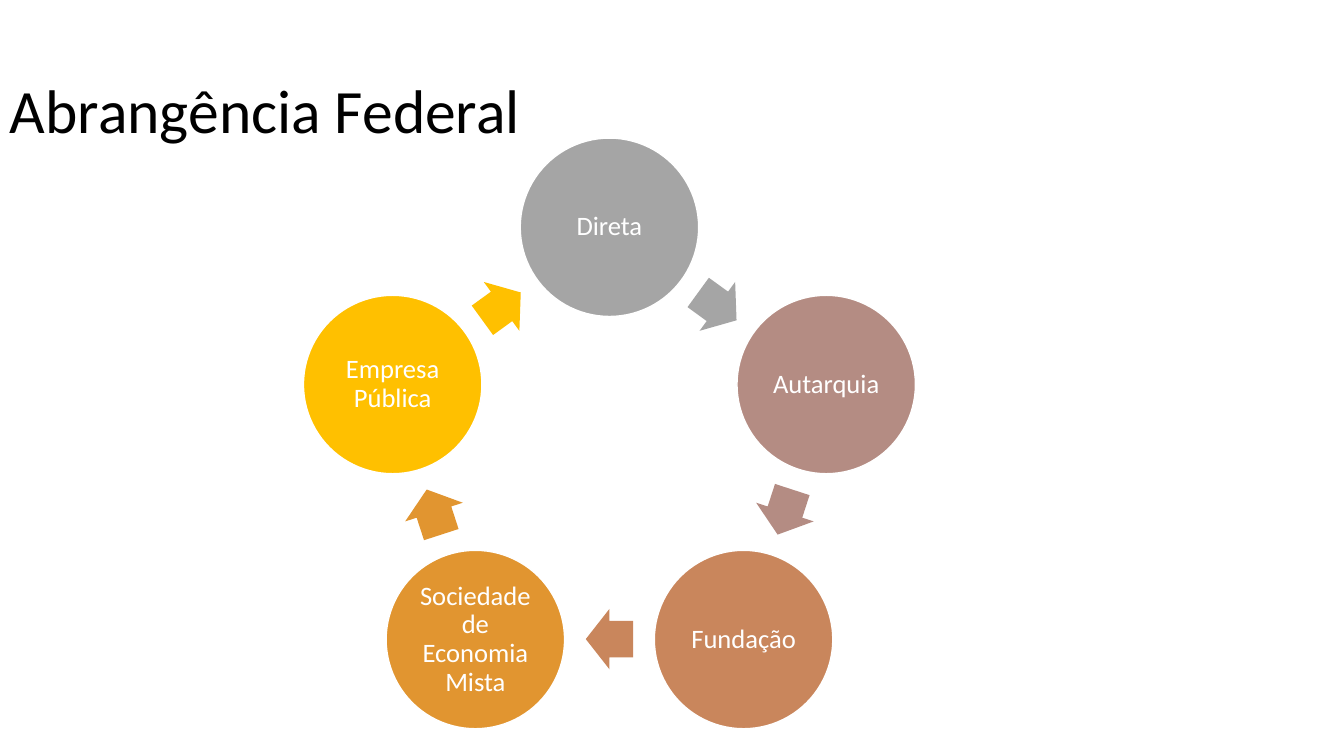
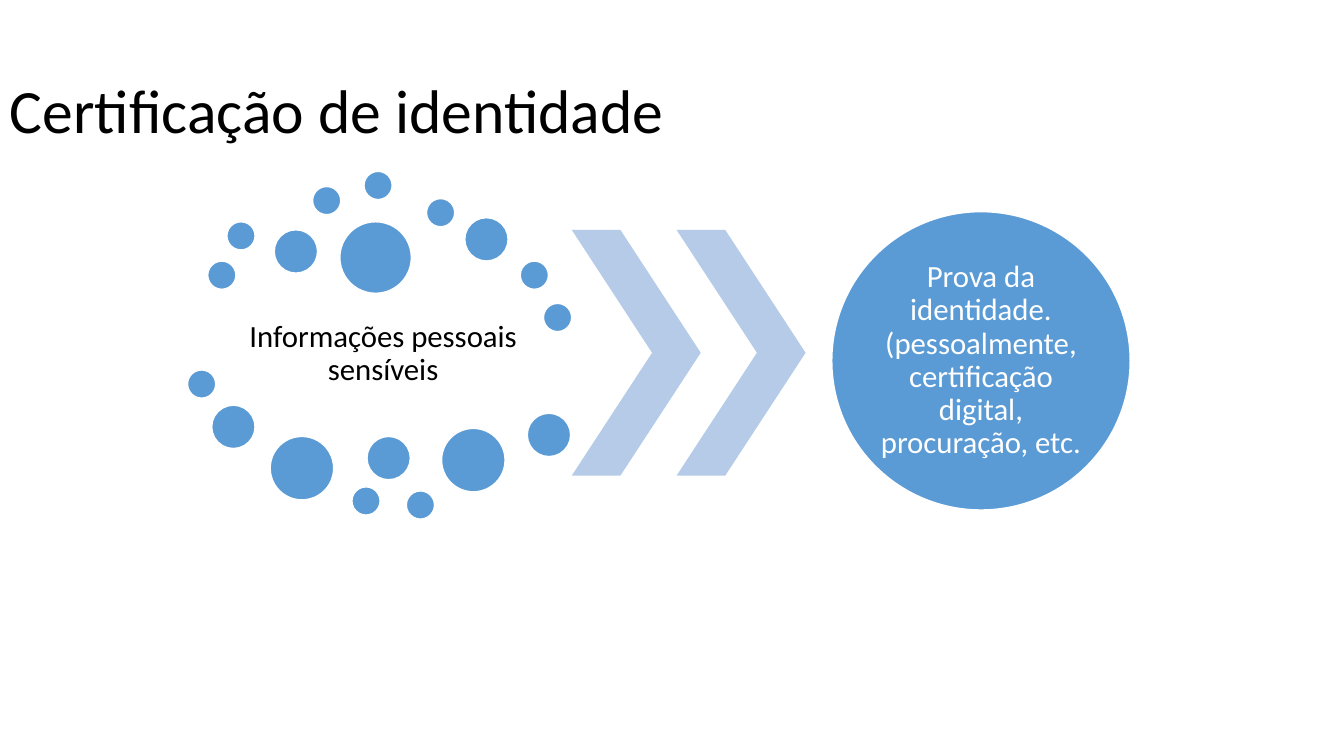
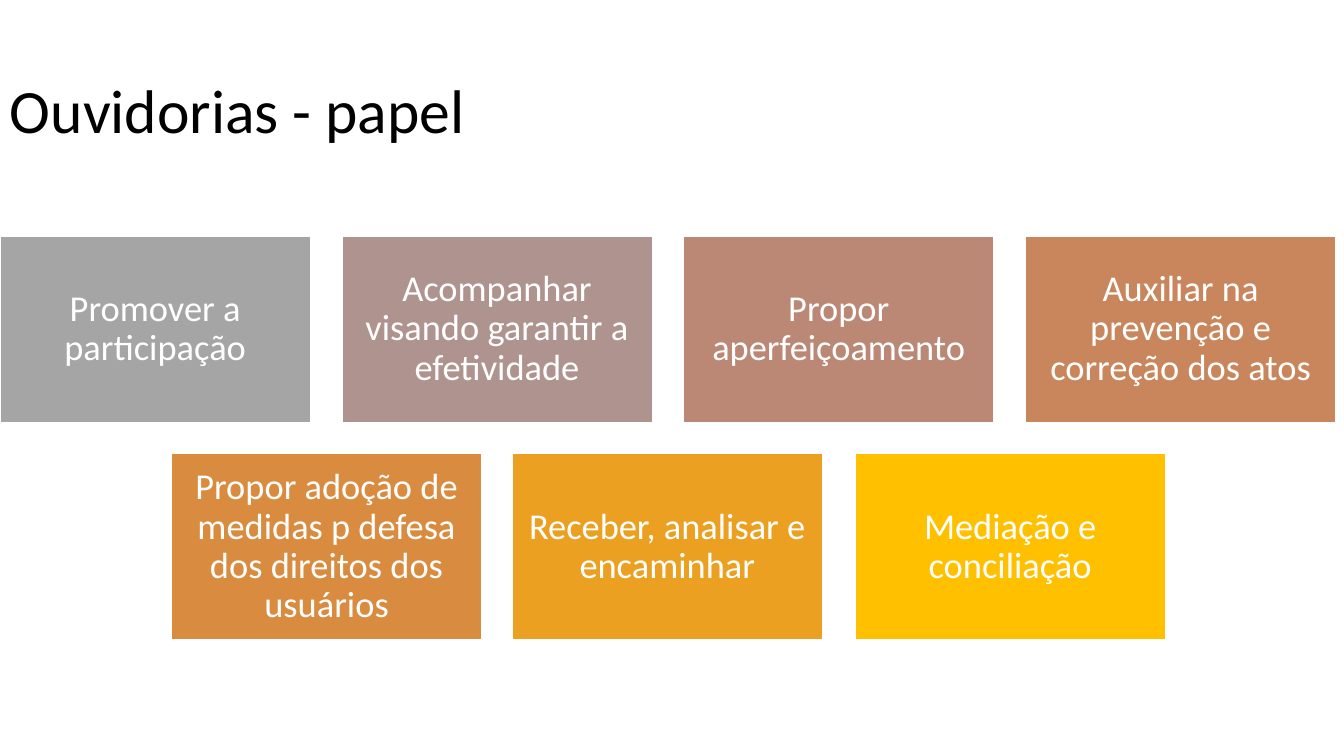
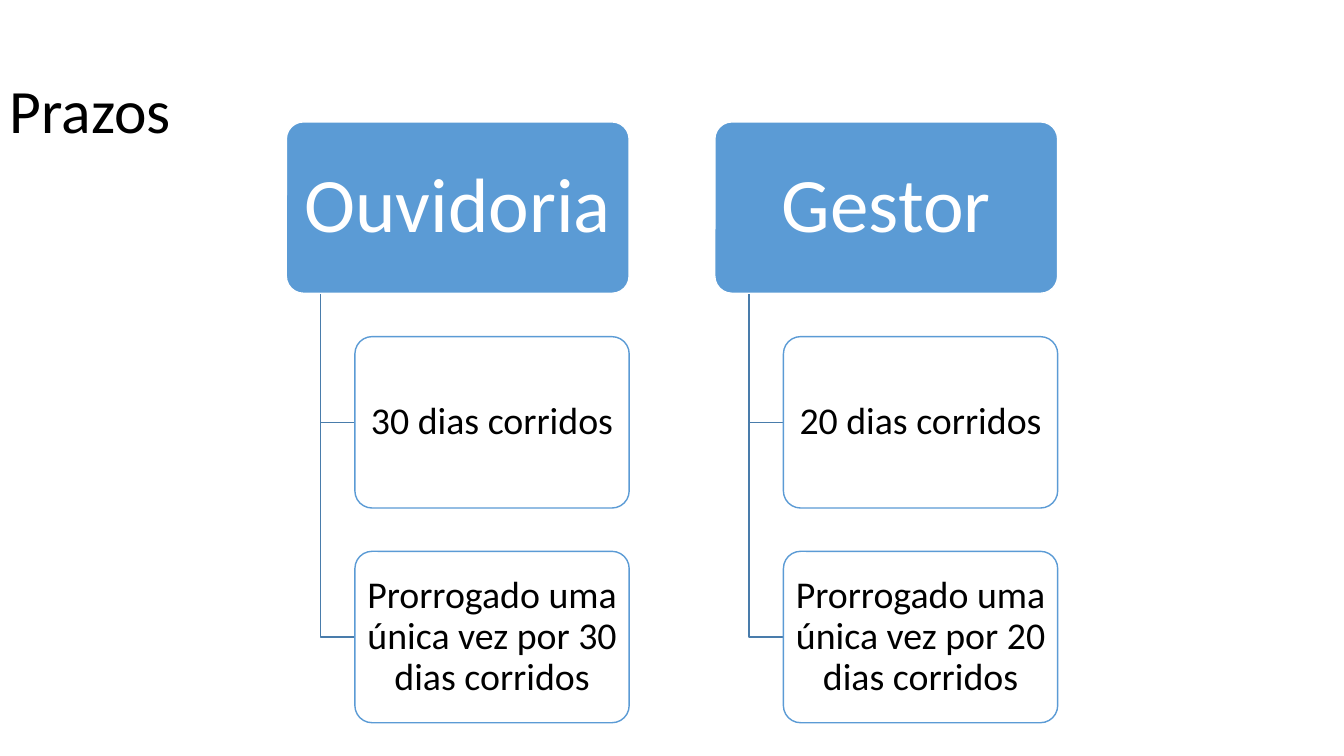
from math import cos, radians, sin

from lxml.etree import SubElement
from pptx import Presentation
from pptx.dml.color import RGBColor
from pptx.enum.shapes import MSO_SHAPE
from pptx.enum.text import MSO_ANCHOR, PP_ALIGN
from pptx.oxml.ns import qn
from pptx.util import Pt

SCALE = 9144
FONT = "Calibri"
COLORS = {
    "black": "000000",
    "white": "FFFFFF",
    "blue": "5B9BD5",
    "pale": "B5CBE7",
    "wire": "497CAB",
    "gray": "A5A5A5",
    "mauve": "B48C83",
    "dusk": "AF938F",
    "rose": "BB8876",
    "clay": "C9865C",
    "rust": "D98C3F",
    "amber": "E19530",
    "honey": "EBA021",
    "gold": "FFC000",
}


def px(value):
    return round(value) * SCALE


def color(name):
    return RGBColor.from_string(COLORS[name])


class Deck:
    def __init__(self, width, height):
        self.prs = Presentation()
        self.prs.slide_width = px(width)
        self.prs.slide_height = px(height)

    def page(self, title):
        self.slide = self.prs.slides.add_slide(self.prs.slide_layouts[6])
        box = self.slide.shapes.add_textbox(0, px(40), px(1150), px(145))
        self.label(box, title, 44, "black", PP_ALIGN.LEFT)

    def label(self, shape, text, size, ink="white", align=PP_ALIGN.CENTER, pad=None):
        frame = shape.text_frame
        frame.word_wrap = True
        frame.vertical_anchor = MSO_ANCHOR.MIDDLE
        if pad:
            side, top = pad
            frame.margin_left = frame.margin_right = px(side)
            frame.margin_top = frame.margin_bottom = px(top)
        frame.text = text
        para = frame.paragraphs[0]
        para.alignment = align
        para.line_spacing = 0.9
        font = para.runs[0].font
        font.name = FONT
        font.size = Pt(size)
        font.color.rgb = color(ink)

    def shape(self, kind, x, y, w, h, fill, line="white", adjust=(), alpha=None):
        shape = self.slide.shapes.add_shape(kind, px(x), px(y), px(w), px(h))
        shape.shadow.inherit = False
        for i, value in enumerate(adjust):
            shape.adjustments[i] = value
        shape.fill.solid()
        shape.fill.fore_color.rgb = color(fill)
        if alpha:
            tint = shape.element.spPr.find(qn("a:solidFill"))[0]
            SubElement(tint, qn("a:alpha")).set("val", str(alpha * 1000))
        if line:
            shape.line.color.rgb = color(line)
            shape.line.width = Pt(1)
        else:
            shape.line.fill.background()
        return shape

    def disc(self, x, y, size, fill):
        return self.shape(MSO_SHAPE.OVAL, x, y, size, size, fill)

    def card(self, x, y, w, h, fill, line="white", alpha=None):
        return self.shape(
            MSO_SHAPE.ROUNDED_RECTANGLE, x, y, w, h, fill, line, (0.1,), alpha
        )

    def elbow(self, x, y, right, down):
        pen = self.slide.shapes.build_freeform(px(x), px(y))
        pen.add_line_segments(
            [(px(x), px(down)), (px(right), px(down))], close=False
        )
        shape = pen.convert_to_shape()
        shape.shadow.inherit = False
        shape.fill.background()
        shape.line.color.rgb = color("wire")
        shape.line.width = Pt(1)


def federal(deck):
    deck.page("Abrangência Federal")
    mid_x, mid_y, radius, size = 604.5, 451.5, 226, 177
    wide, high = 47, 60
    near = radius * cos(radians(36))
    nodes = [
        ("Direta", "gray"),
        ("Autarquia", "mauve"),
        ("Fundação", "clay"),
        ("Sociedade de Economia Mista", "amber"),
        ("Empresa Pública", "gold"),
    ]
    for i, (text, fill) in enumerate(nodes):
        turn = radians(72 * i)
        x = mid_x + radius * sin(turn) - size / 2
        y = mid_y - radius * cos(turn) - size / 2
        deck.label(deck.disc(x, y, size, fill), text, 19, pad=(3, 3))
        angle = 72 * i + 36
        x = mid_x + near * sin(radians(angle)) - wide / 2
        y = mid_y - near * cos(radians(angle)) - high / 2
        arrow = deck.shape(
            MSO_SHAPE.RIGHT_ARROW, x, y, wide, high, fill, None, (0.6, 0.5)
        )
        arrow.rotation = angle


def identity(deck):
    deck.page("Certificação de identidade")
    core = deck.slide.shapes.add_textbox(px(206), px(294), px(348), px(115))
    deck.label(core, "Informações pessoais sensíveis", 22, "black", pad=(3, 3))
    dots = {
        28: [(206, 259), (225, 220), (310, 185), (361, 170), (423, 197),
             (516, 259), (539, 301), (186, 367), (349, 483), (403, 487)],
        43: [(272, 228), (461, 216), (210, 402), (364, 433), (523, 410)],
        63: [(268, 433), (438, 425)],
        71: [(337, 220)],
    }
    for size, spots in dots.items():
        for x, y in spots:
            deck.disc(x, y, size, "blue")
    for x in (567, 671):
        deck.shape(MSO_SHAPE.CHEVRON, x, 228, 128, 244, "pale", None, (0.623,))
    proof = deck.disc(825, 210, 296, "blue")
    text = (
        "Prova da identidade. (pessoalmente, certificação digital, "
        "procuração, etc."
    )
    deck.label(proof, text, 22, pad=(0, 0))


def roles(deck):
    deck.page("Ouvidorias - papel")
    wide, high, gap, full = 308, 185, 31, 1325
    rows = [
        [
            ("Promover a participação", "gray"),
            ("Acompanhar visando garantir a efetividade", "dusk"),
            ("Propor aperfeiçoamento", "rose"),
            ("Auxiliar na prevenção e correção dos atos", "clay"),
        ],
        [
            ("Propor adoção de medidas p defesa dos direitos dos usuários", "rust"),
            ("Receber, analisar e encaminhar", "honey"),
            ("Mediação e conciliação", "gold"),
        ],
    ]
    for j, row in enumerate(rows):
        left = (full - len(row) * (wide + gap) + gap) / 2
        for i, (text, fill) in enumerate(row):
            x = left + i * (wide + gap)
            y = 234 + j * (high + gap)
            tile = deck.shape(MSO_SHAPE.RECTANGLE, x, y, wide, high, fill)
            deck.label(tile, text, 26, pad=(11, 11))


def terms(deck):
    deck.page("Prazos")
    high, step = 170, 213
    for x, head, days in ((284, "Ouvidoria", 30), (709, "Gestor", 20)):
        top = deck.card(x, 121, 340, high, "blue")
        deck.label(top, head, 55, pad=(11, 8))
        items = (
            f"{days} dias corridos",
            f"Prorrogado uma única vez por {days} dias corridos",
        )
        for i, text in enumerate(items):
            y = 334 + i * step
            deck.elbow(x + 34, 292, x + 68, y + high / 2)
            card = deck.card(x + 68, y, 272, high, "white", "blue", 90)
            deck.label(card, text, 27, "black", pad=(6, 4))


def main():
    deck = Deck(1333, 750)
    for build in (federal, identity, roles, terms):
        build(deck)
    deck.prs.save("out.pptx")


if __name__ == "__main__":
    main()
